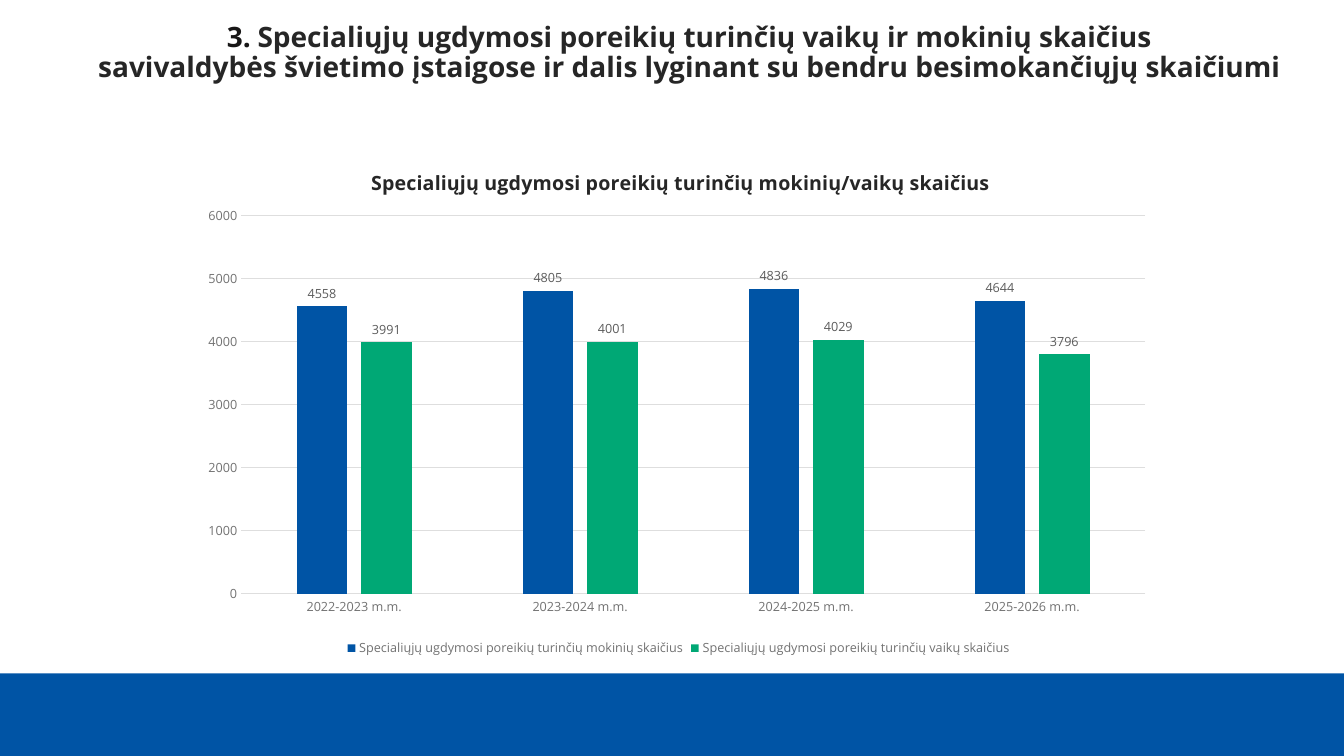
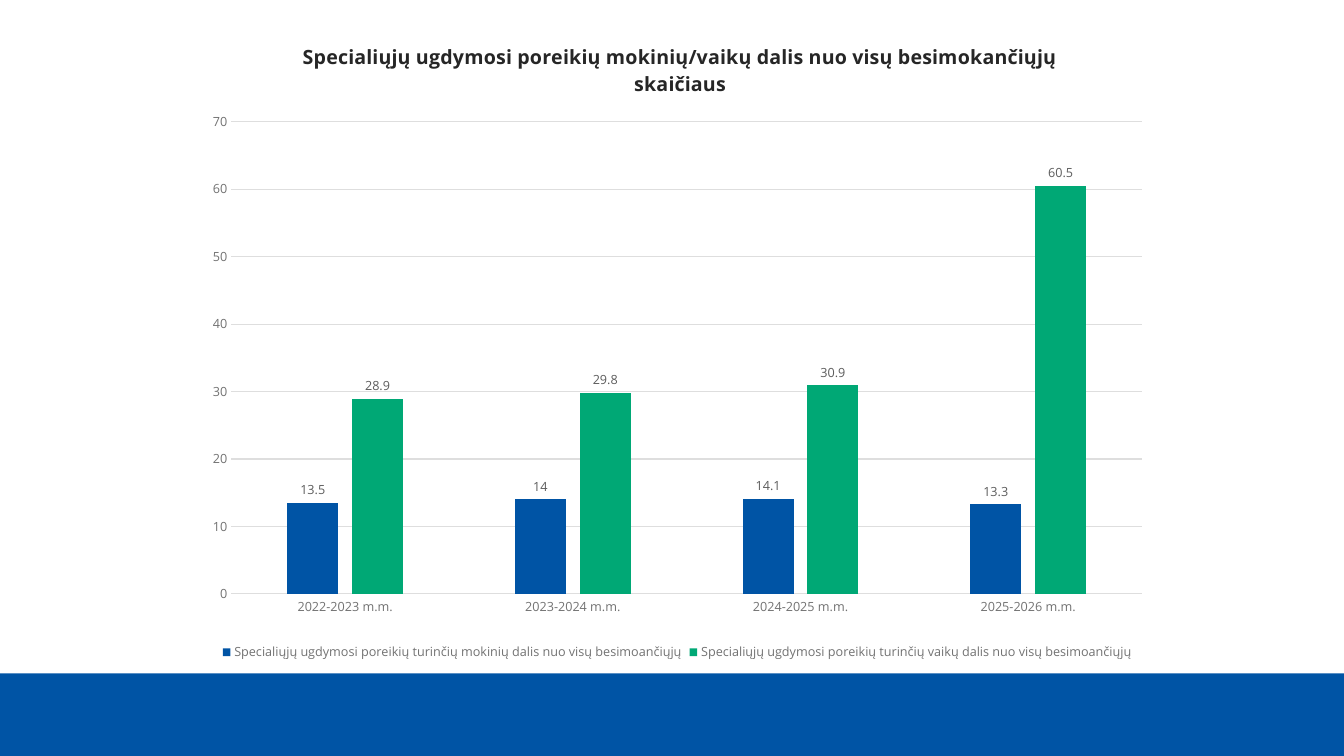
import pptx
import pptx.util
import pptx.chart.data
import pptx.dml.color
import pptx.enum.chart
import pptx.enum.shapes
import pptx.enum.text
import pptx.oxml
import pptx.oxml.ns

RGBColor = pptx.dml.color.RGBColor
BLUE = RGBColor(0x00, 0x54, 0xA5)
GREEN = RGBColor(0x00, 0xA8, 0x75)
INK = RGBColor(0x26, 0x26, 0x26)
NUMBER_INK = RGBColor(0x18, 0x17, 0x17)
AXIS_GREY = RGBColor(0x72, 0x72, 0x72)
LABEL_GREY = RGBColor(0x5C, 0x5C, 0x5C)
GRID_GREY = RGBColor(0xDE, 0xDE, 0xDE)
FONT = "Open Sans"

SLIDE_WIDTH = pptx.util.Inches(13.33)
SLIDE_HEIGHT = pptx.util.Inches(7.5)

# Boxes as left, top, width, height in percent of the slide
BAND_BOX = (0, 89.07, 100, 10.93)
HEADING_BOX = (5.85, 2.4, 90.92, 14.4)

SCHOOL_YEARS = ["2022-2023 m.m.", "2023-2024 m.m.", "2024-2025 m.m.", "2025-2026 m.m."]

HEADING = [
    [("3.", 20, NUMBER_INK, True), (" ", 18, INK, False),
     ("Specialiųjų ugdymosi poreikių turinčių vaikų ir mokinių skaičius", 20, INK, True)],
    [("savivaldybės švietimo įstaigose ir dalis lyginant su bendru besimokančiųjų skaičiumi",
      20, INK, True)],
]

# Layouts are shares of the chart's own box
COUNT_CHART = {
    "box": (14.33, 18.93, 72.32, 68.53),
    "title": "Specialiųjų ugdymosi poreikių turinčių mokinių/vaikų skaičius",
    "title_layout": {"x": 0.18, "y": 0.04},
    "plot_layout": {"x": 0.05, "y": 0.14, "w": 0.93, "h": 0.73},
    "top": 6000, "step": 1000,
    "series": {
        "Specialiųjų ugdymosi poreikių turinčių mokinių skaičius": (4558, 4805, 4836, 4644),
        "Specialiųjų ugdymosi poreikių turinčių vaikų skaičius": (3991, 4001, 4029, 3796),
    },
}
SHARE_CHART = {
    "box": (14.33, 2.4, 72.09, 85.6),
    "title": "Specialiųjų ugdymosi poreikių mokinių/vaikų dalis nuo visų besimokančiųjų skaičiaus",
    "title_layout": {"x": 0.11, "y": 0.03},
    "plot_layout": {"x": 0.04, "y": 0.16, "w": 0.94, "h": 0.73},
    "top": 70, "step": 10,
    "series": {
        "Specialiųjų ugdymosi poreikių turinčių mokinių dalis nuo visų besimoančiųjų":
            (13.5, 14, 14.1, 13.3),
        "Specialiųjų ugdymosi poreikių turinčių vaikų dalis nuo visų besimoančiųjų":
            (28.9, 29.8, 30.9, 60.5),
    },
}


def place(box):
    """Turn a percent box into slide lengths."""
    sides = (SLIDE_WIDTH, SLIDE_HEIGHT) * 2
    return [round(side * share / 100) for side, share in zip(sides, box)]


def apply(target, values):
    for name, value in values.items():
        setattr(target, name, value)


def style_font(font, size, color, bold=False):
    apply(font, {"name": FONT, "size": pptx.util.Pt(size), "bold": bold})
    font.color.rgb = color


def style_line(line):
    line.color.rgb = GRID_GREY
    line.width = pptx.util.Pt(0.75)


def set_layout(parent, index, shares, inner=False):
    """Fix the place of a chart part inside the chart."""
    qn = pptx.oxml.ns.qn
    layout = parent.find(qn("c:layout"))
    if layout is not None:
        parent.remove(layout)
    settings = [("layoutTarget", "inner")] if inner else []
    settings += [(f"{side}Mode", "edge") for side in "xy"] + list(shares.items())
    parts = "".join(f'<c:{tag} val="{value}"/>' for tag, value in settings)
    parent.insert(index, pptx.oxml.parse_xml(
        f'<c:layout {pptx.oxml.ns.nsdecls("c")}><c:manualLayout>{parts}'
        "</c:manualLayout></c:layout>"))


def add_band(slide, box):
    band = slide.shapes.add_shape(pptx.enum.shapes.MSO_SHAPE.RECTANGLE, *place(box))
    band.shadow.inherit = False
    band.fill.solid()
    band.fill.fore_color.rgb = BLUE
    band.line.fill.background()


def add_heading(slide, box, lines):
    frame = slide.shapes.add_textbox(*place(box)).text_frame
    frame.word_wrap = False
    for number, runs in enumerate(lines):
        line = frame.add_paragraph() if number else frame.paragraphs[0]
        apply(line, {"alignment": pptx.enum.text.PP_ALIGN.CENTER, "line_spacing": 0.9})
        for text, *style in runs:
            run = line.add_run()
            run.text = text
            style_font(run.font, *style)


def add_column_chart(slide, content):
    data = pptx.chart.data.CategoryChartData()
    data.categories = SCHOOL_YEARS
    for name, values in content["series"].items():
        data.add_series(name, values)
    chart = slide.shapes.add_chart(
        pptx.enum.chart.XL_CHART_TYPE.COLUMN_CLUSTERED, *place(content["box"]), data).chart
    style_font(chart.font, 10, INK)

    # Title
    chart.has_title = True
    title = chart.chart_title.text_frame
    title.text = content["title"]
    style_font(title.paragraphs[0].runs[0].font, 14, INK, True)

    # Legend
    chart.has_legend = True
    apply(chart.legend, {"position": pptx.enum.chart.XL_LEGEND_POSITION.BOTTOM,
                         "include_in_layout": False})
    style_font(chart.legend.font, 9, AXIS_GREY)

    # Axes
    for axis in (chart.category_axis, chart.value_axis):
        no_tick = pptx.enum.chart.XL_TICK_MARK.NONE
        apply(axis, {"major_tick_mark": no_tick, "minor_tick_mark": no_tick})
        style_font(axis.tick_labels.font, 9, AXIS_GREY)
    style_line(chart.category_axis.format.line)
    apply(chart.value_axis, {"minimum_scale": 0, "maximum_scale": content["top"],
                             "major_unit": content["step"], "has_major_gridlines": True})
    chart.value_axis.format.line.fill.background()
    style_line(chart.value_axis.major_gridlines.format.line)

    # Columns and their values
    plot = chart.plots[0]
    apply(plot, {"gap_width": 219, "overlap": -27, "vary_by_categories": False})
    for series, color in zip(plot.series, (BLUE, GREEN)):
        series.format.fill.solid()
        series.format.fill.fore_color.rgb = color
        apply(series.data_labels, {
            "show_value": True,
            "position": pptx.enum.chart.XL_LABEL_POSITION.OUTSIDE_END})
        style_font(series.data_labels.font, 9, LABEL_GREY)

    # Fixed places of title and plot
    set_layout(chart.chart_title._element, 1, content["title_layout"])
    set_layout(chart._chartSpace.chart.plotArea, 0, content["plot_layout"], inner=True)


def add_chart_slide(deck, content, heading=None):
    slide = deck.slides.add_slide(deck.slide_layouts[6])
    add_band(slide, BAND_BOX)
    add_column_chart(slide, content)
    if heading:
        add_heading(slide, HEADING_BOX, heading)


def main():
    deck = pptx.Presentation()
    apply(deck, {"slide_width": SLIDE_WIDTH, "slide_height": SLIDE_HEIGHT})
    add_chart_slide(deck, COUNT_CHART, HEADING)
    add_chart_slide(deck, SHARE_CHART)
    deck.save("out.pptx")


if __name__ == "__main__":
    main()
